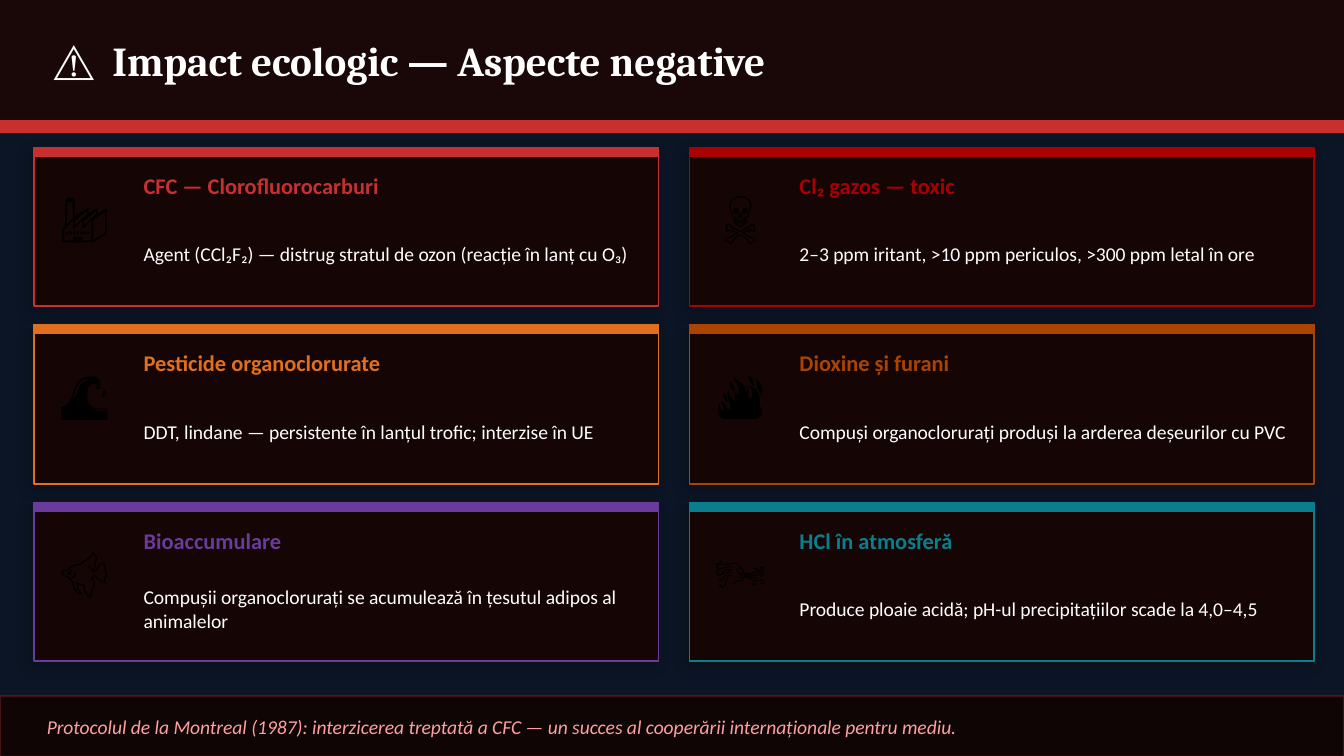
"""Build a slide on the negative ecological impact of chlorine compounds."""

from lxml import etree
from pptx import Presentation
from pptx.dml.color import RGBColor
from pptx.enum.shapes import MSO_SHAPE
from pptx.enum.text import MSO_ANCHOR, PP_ALIGN
from pptx.oxml.ns import qn
from pptx.util import Inches, Pt

RECT = MSO_SHAPE.RECTANGLE
MIDDLE = MSO_ANCHOR.MIDDLE
LEFT = PP_ALIGN.LEFT
CENTER = PP_ALIGN.CENTER

COLORS = {
    "back": "0C1525",
    "header": "1A0808",
    "card": "150505",
    "footer": "0F0505",
    "white": "FFFFFF",
    "black": "000000",
    "pink": "FFA0A0",
    "red": "C83030",
    "blood": "AA0000",
    "orange": "E07020",
    "rust": "AA4400",
    "purple": "6A3A9C",
    "teal": "0A7E8C",
}

CARDS = [
    ("🏭", "CFC — Clorofluorocarburi", "red",
     "Agent (CCl₂F₂) — distrug stratul de ozon (reacție în lanț cu O₃)"),
    ("☠️", "Cl₂ gazos — toxic", "blood",
     "2–3 ppm iritant, >10 ppm periculos, >300 ppm letal în ore"),
    ("🌊", "Pesticide organoclorurate", "orange",
     "DDT, lindane — persistente în lanțul trofic; interzise în UE"),
    ("🔥", "Dioxine și furani", "rust",
     "Compuși organoclorurați produși la arderea deșeurilor cu PVC"),
    ("🐠", "Bioaccumulare", "purple",
     "Compușii organoclorurați se acumulează în țesutul adipos al animalelor"),
    ("🌬️", "HCl în atmosferă", "teal",
     "Produce ploaie acidă; pH-ul precipitațiilor scade la 4,0–4,5"),
]


def color(name):
    """Return the named colour."""
    return RGBColor.from_string(COLORS[name])


def add_box(slide, x, y, w, h, fill, line):
    """Add a filled rectangle with a thin outline."""
    box = slide.shapes.add_shape(RECT, Inches(x), Inches(y), Inches(w), Inches(h))
    box.shadow.inherit = False
    box.fill.solid()
    box.fill.fore_color.rgb = color(fill)
    box.line.color.rgb = color(line)
    box.line.width = Pt(1)
    return box


def add_shadow(box):
    """Give a box a soft outer shadow."""
    effects = box._element.spPr.find(qn("a:effectLst"))
    shadow = etree.SubElement(
        effects, qn("a:outerShdw"), blurRad=str(Pt(7)), dist=str(Pt(3)),
        dir=str(135 * 60000), algn="bl", rotWithShape="0")
    tint = etree.SubElement(shadow, qn("a:srgbClr"), val=COLORS["black"])
    etree.SubElement(tint, qn("a:alpha"), val="18000")


def fade_line(box, percent):
    """Set the opacity of a box outline."""
    tint = box.line._ln.find(".//" + qn("a:srgbClr"))
    etree.SubElement(tint, qn("a:alpha"), val=str(percent * 1000))


def add_text(slide, x, y, w, h, parts, size, tone, font="Calibri",
             bold=False, italic=False, align=LEFT):
    """Add a centred-height text box made of (text, spacing) runs."""
    frame = slide.shapes.add_textbox(
        Inches(x), Inches(y), Inches(w), Inches(h)).text_frame
    frame.word_wrap = True
    frame.vertical_anchor = MIDDLE
    para = frame.paragraphs[0]
    para.alignment = align
    for text, gap in parts:
        run = para.add_run()
        run.text = text
        run.font.name = font
        run.font.size = Pt(size)
        run.font.bold = bold
        run.font.italic = italic
        run.font.color.rgb = color(tone)
        if gap:
            run._r.get_or_add_rPr().set("spc", str(gap))


def add_header(slide):
    """Add the title band and its red rule."""
    add_box(slide, 0, 0, 10, 0.9, "header", "header")
    add_box(slide, 0, 0.9, 10, 0.08, "red", "red")
    title = [("⚠️", 0), (" ", 480), ("Impact ecologic — Aspecte negative", 0)]
    add_text(slide, 0.3, 0, 9.4, 0.9, title, 22, "white", "Cambria", bold=True)


def add_card(slide, x, y, icon, title, tone, body):
    """Add one card with its top bar, icon, title and body."""
    add_shadow(add_box(slide, x, y, 4.65, 1.18, "card", tone))
    add_box(slide, x, y, 4.65, 0.06, tone, tone)
    add_text(slide, x + 0.08, y + 0.1, 0.6, 0.8, [(icon, 0)], 26, "black", align=CENTER)
    add_text(slide, x + 0.72, y + 0.1, 3.85, 0.36, [(title, 0)], 12, tone, bold=True)
    add_text(slide, x + 0.72, y + 0.48, 3.85, 0.62, [(body, 0)], 10.5, "white")


def add_footer(slide):
    """Add the closing note."""
    fade_line(add_box(slide, 0, 5.18, 10, 0.45, "footer", "red"), 30)
    note = ("Protocolul de la Montreal (1987): interzicerea treptată a CFC — "
            "un succes al cooperării internaționale pentru mediu.")
    add_text(slide, 0.25, 5.18, 9.5, 0.45, [(note, 0)], 10.5, "pink", italic=True)


def main():
    """Build and save the slide."""
    deck = Presentation()
    deck.slide_width = Inches(10)
    deck.slide_height = Inches(10 * 9 / 16)
    slide = deck.slides.add_slide(deck.slide_layouts[6])
    slide.background.fill.solid()
    slide.background.fill.fore_color.rgb = color("back")
    add_header(slide)
    for i, card in enumerate(CARDS):
        row, col = divmod(i, 2)
        add_card(slide, 0.25 + col * 4.88, 1.1 + row * 1.32, *card)
    add_footer(slide)
    deck.save("out.pptx")


if __name__ == "__main__":
    main()
